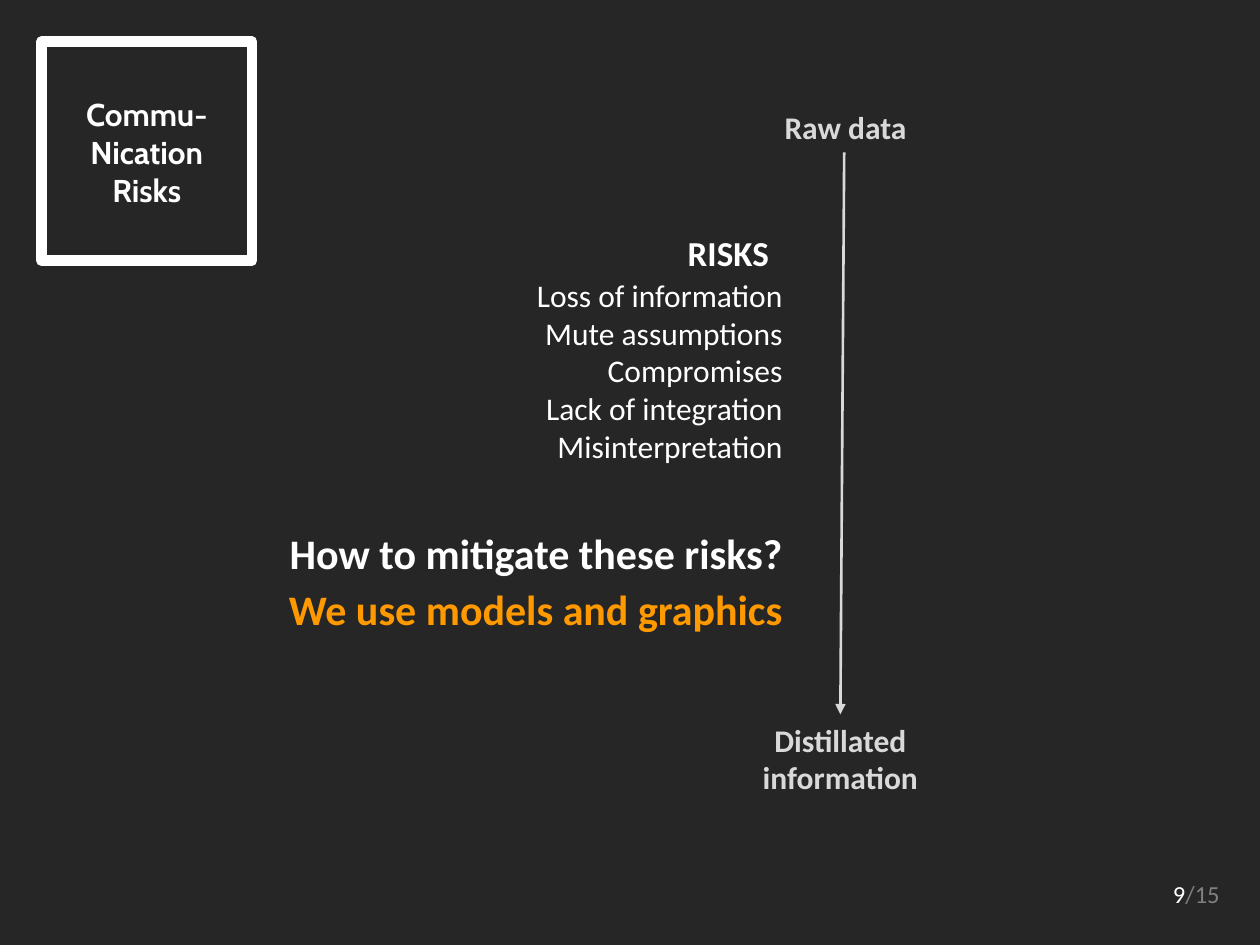
from lxml.etree import SubElement
from pptx import Presentation
from pptx.dml.color import RGBColor
from pptx.enum.shapes import MSO_CONNECTOR, MSO_SHAPE
from pptx.enum.text import MSO_ANCHOR, MSO_AUTO_SIZE, PP_ALIGN
from pptx.oxml.ns import qn
from pptx.util import Inches, Pt

WHITE, LIGHT, GRAY, ORANGE, DARK = "FFFFFF", "D9D9D9", "808080", "FF9900", "262626"
LEFT, CENTER, RIGHT = PP_ALIGN.LEFT, PP_ALIGN.CENTER, PP_ALIGN.RIGHT
RISKS = ["Loss of information", "Mute assumptions", "Compromises",
         "Lack of integration", "Misinterpretation"]


def rgb(color):
    """Turn a hex string into a colour."""
    return RGBColor.from_string(color)


def add_run(p, text, size, color, bold=False, name="Calibri"):
    """Append a formatted run to a paragraph."""
    r = p.add_run()
    r.text = text
    for key, value in {"size": Pt(size), "bold": bold, "name": name}.items():
        setattr(r.font, key, value)
    r.font.color.rgb = rgb(color)


def write_lines(tf, lines, align, *style, wrap=False, anchor=MSO_ANCHOR.TOP):
    """Write one paragraph per line into a text frame."""
    settings = {"word_wrap": wrap, "vertical_anchor": anchor,
                "auto_size": MSO_AUTO_SIZE.SHAPE_TO_FIT_TEXT}
    for key, value in settings.items():
        setattr(tf, key, value)
    for i, line in enumerate(lines):
        p = tf.add_paragraph() if i else tf.paragraphs[0]
        p.alignment = align
        add_run(p, line, *style)


def add_text(s, box, lines, align, *style, wrap=False):
    """Add a text box and return its text frame."""
    tf = s.shapes.add_textbox(*map(Inches, box)).text_frame
    write_lines(tf, lines, align, *style, wrap=wrap)
    return tf


def set_title(s, box, lines):
    """Move and format the title placeholder."""
    sp = s.shapes.title
    for key, value in zip(("left", "top", "width", "height"), box):
        setattr(sp, key, Inches(value))
    write_lines(sp.text_frame, lines, CENTER, 18, WHITE, True, "Cabin",
                anchor=MSO_ANCHOR.MIDDLE)


def add_frame(s, box):
    """Add the unfilled square around the title."""
    sp = s.shapes.add_shape(MSO_SHAPE.RECTANGLE, *map(Inches, box))
    sp.shadow.inherit = False
    sp.fill.background()
    sp.line.color.rgb = rgb(WHITE)
    sp.line.width = Pt(6)


def add_arrow(s, start, end):
    """Add a straight arrow without shadow."""
    c = s.shapes.add_connector(MSO_CONNECTOR.STRAIGHT, *map(Inches, start + end))
    c.line.color.rgb = rgb(LIGHT)
    c.line.width = Pt(1.5)
    SubElement(c.line._get_or_add_ln(), qn("a:tailEnd"), type="triangle")
    SubElement(c._element.spPr, qn("a:effectLst"))


def main():
    """Build the slide on communication risks."""
    prs = Presentation()
    prs.slide_width, prs.slide_height = Inches(10), Inches(7.5)
    s = prs.slides.add_slide(prs.slide_layouts[5])
    s.background.fill.solid()
    s.background.fill.fore_color.rgb = rgb(DARK)

    add_frame(s, (0.33, 0.33, 1.67, 1.74))
    set_title(s, (0.58, 0.7, 1.17, 1.01), ["Commu-", "Nication", "Risks"])

    add_text(s, (5.36, 1.79, 0.95, 0.44), ["RISKS"], LEFT, 20, WHITE, True)
    add_text(s, (4.08, 2.14, 2.23, 1.62), RISKS, RIGHT, 18, WHITE)
    add_text(s, (1.99, 4.14, 4.32, 0.5), ["How to mitigate these risks?"],
             RIGHT, 24, WHITE, True)
    add_text(s, (2.03, 4.58, 4.28, 0.5), ["We use models and graphics"],
             RIGHT, 24, ORANGE, True)

    add_text(s, (6.12, 0.81, 1.18, 0.4), ["Raw data"], CENTER, 18, LIGHT, True)
    add_arrow(s, (6.7, 1.21), (6.67, 5.67))
    add_text(s, (5.92, 5.67, 1.5, 0.71), ["Distillated information"],
             CENTER, 18, LIGHT, True, wrap=True)

    tf = add_text(s, (9.21, 6.93, 0.58, 0.34), ["9"], LEFT, 14, WHITE)
    add_run(tf.paragraphs[0], "/15", 14, GRAY)
    prs.save("out.pptx")


if __name__ == "__main__":
    main()
